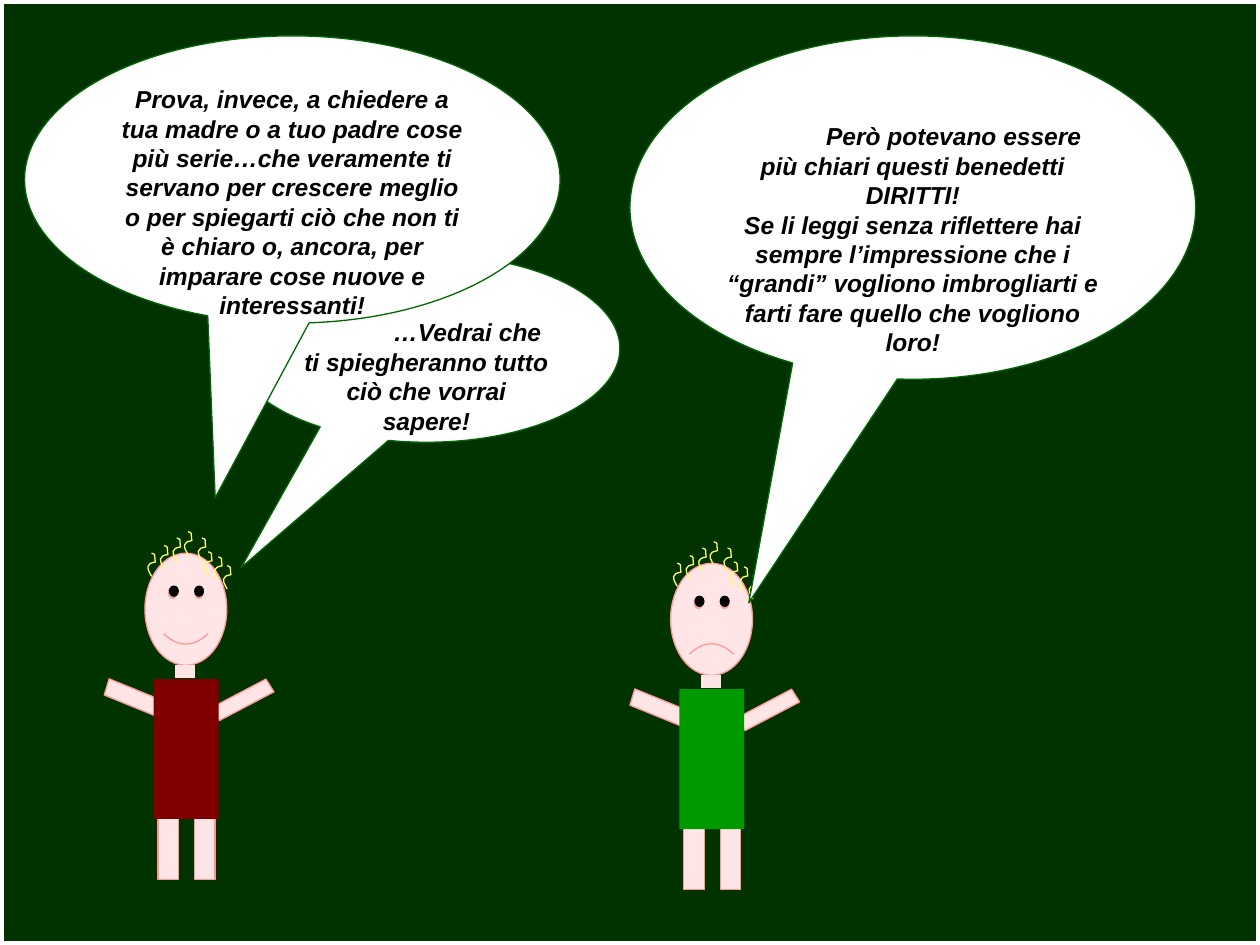
"""Build a slide of two children talking in speech bubbles."""
from dataclasses import dataclass, replace

from lxml.etree import SubElement as add_node
from pptx import Presentation
from pptx.dml.color import RGBColor
from pptx.enum.shapes import MSO_SHAPE as Kind
from pptx.enum.text import MSO_ANCHOR as Anchor, PP_ALIGN as Align
from pptx.oxml.ns import qn
from pptx.shapes.autoshape import Shape
from pptx.util import Inches, Pt

WIDE, HIGH = Inches(10), Inches(7.5)
COLS, ROWS = 100, 75
WHITE = RGBColor(0xFF, 0xFF, 0xFF)
BLACK = RGBColor(0x00, 0x00, 0x00)
DARK = RGBColor(0x00, 0x33, 0x00)
EDGE = RGBColor(0x00, 0x66, 0x00)
SKIN = RGBColor(0xFF, 0xE5, 0xE5)
PINK = RGBColor(0xFF, 0x99, 0x99)
GOLD = RGBColor(0xFF, 0xFF, 0x66)
RED = RGBColor(0x80, 0x00, 0x00)
GREEN = RGBColor(0x00, 0x99, 0x00)

Point = tuple[float, float]


@dataclass(frozen=True)
class Box:
    """A place on the grid, in columns and rows."""
    col: float
    row: float
    wide: float
    high: float

    def shift(self, col: float, row: float) -> "Box":
        """Return the box moved by columns and rows."""
        return replace(self, col=self.col + col, row=self.row + row)


@dataclass(frozen=True)
class Part:
    """A preset shape with its place and look."""
    kind: Kind
    box: Box
    fill: RGBColor | None = SKIN
    line: RGBColor | None = PINK
    turn: float = 0
    bend: tuple[float, ...] = ()


@dataclass(frozen=True)
class Kid:
    """A child with a shirt colour and a mood."""
    col: float
    row: float
    shirt: RGBColor
    smile: float


@dataclass(frozen=True)
class Bubble:
    """A speech bubble with its tail and its words."""
    box: Box
    tail: Point
    words: tuple[str, ...]
    late: bool = True


CURLS = ((0, 0), (1, -0.6), (4, -1.2), (4.5, -0.1),
         (2.9, -1.7), (6, 1), (5.3, 0.3), (2, -1.2))
CURVE = ((0.53, 1.85), (0.4, 1.55), (0, 1.1), (0.42, 0.83),
         (0.53, 0.75), (0.69, 0.75), (0.83, 0.72),
         (0.72, 0), (0.91, 0.15), (0.53, 0))
KIDS = (Kid(53.22, 44.7, GREEN, -0.047), Kid(11.5, 43.9, RED, 0.047))
BACK = Bubble(Box(18.5, 20.2, 30.7, 14.9), (-0.479, 1.167),
              ("…Vedrai che ti spiegheranno tutto ciò che vorrai sapere!",))
FRONT = (
    Bubble(Box(1.95, 2.85, 42.5, 22.8), (-0.144, 1.108),
           ("Prova, invece, a chiedere a tua madre o a tuo padre cose più "
            "serie…che veramente ti servano per crescere meglio o per "
            "spiegarti ciò che non ti è chiaro o, ancora, per imparare cose "
            "nuove e interessanti!",), False),
    Bubble(Box(50, 2.85, 44.9, 27.25), (-0.29, 1.151),
           ("Però potevano essere più chiari questi benedetti DIRITTI!",
            "Se li leggi senza riflettere hai sempre l’impressione che i "
            "“grandi” vogliono imbrogliarti e farti fare quello che vogliono "
            "loro!")),
)


def across(cols: float) -> int:
    """Turn columns into a length."""
    return round(WIDE * cols / COLS)


def down(rows: float) -> int:
    """Turn rows into a length."""
    return round(HIGH * rows / ROWS)


def paint(shape: Shape, fill: RGBColor | None, line: RGBColor | None,
          weight: float = 0.75) -> None:
    """Set the fill and outline and drop the shadow."""
    shape.shadow.inherit = False
    if fill is None:
        shape.fill.background()
    else:
        shape.fill.solid()
        shape.fill.fore_color.rgb = fill
    if line is None:
        shape.line.fill.background()
    else:
        shape.line.color.rgb = line
        shape.line.width = Pt(weight)


def draw(shapes, part: Part, weight: float = 0.75) -> Shape:
    """Add one preset shape."""
    box = part.box
    shape = shapes.add_shape(part.kind, across(box.col), down(box.row),
                             across(box.wide), down(box.high))
    paint(shape, part.fill, part.line, weight)
    shape.rotation = part.turn
    for i, value in enumerate(part.bend):
        shape.adjustments[i] = value
    return shape


def draw_curl(shapes, col: float, row: float) -> None:
    """Add one curl of hair, turning each three lines into a curve."""
    spots = [(across(col + x), down(row + y)) for x, y in CURVE]
    pen = shapes.build_freeform(*spots[0])
    pen.add_line_segments(spots[1:], close=False)
    curl = pen.convert_to_shape()
    paint(curl, None, GOLD)
    lines = list(curl._element.iter(qn("a:lnTo")))
    route = lines[0].getparent()
    for i in range(0, len(lines), 3):
        bow = add_node(route, qn("a:cubicBezTo"))
        for line in lines[i:i + 3]:
            bow.append(line[0])
            route.remove(line)


def draw_kid(shapes, kid: Kid) -> None:
    """Add a child as one group."""
    group = shapes.add_group_shape().shapes
    slant = Kind.PARALLELOGRAM
    parts = (
        Part(slant, Box(6.95, 9.2, 1.6, 4.9), turn=57.6, bend=(0.25,)),
        Part(slant, Box(-1.65, 9.1, 1.8, 4.9), turn=106.9, bend=(0.25,)),
        *(Part(Kind.RECTANGLE, Box(x, 20.1, 1.63, 5.8)) for x in (1.05, 3.95)),
        Part(Kind.SMILEY_FACE, Box(0, 0, 6.5, 8.9), bend=(kid.smile,)),
        *(Part(Kind.OVAL, Box(x, 2.57, 0.8, 0.9), BLACK, None)
          for x in (3.9, 1.9)),
        Part(Kind.RECTANGLE, Box(2.45, 8.9, 1.5, 1), line=SKIN),
        Part(Kind.RECTANGLE, Box(0.7, 10, 5.15, 11.1), kid.shirt, None),
    )
    for part in parts:
        draw(group, replace(part, box=part.box.shift(kid.col, kid.row)))
    for x, y in CURLS:
        draw_curl(group, kid.col + x, kid.row + y)


def draw_bubble(shapes, bubble: Bubble) -> None:
    """Add a speech bubble, starting a line lower when late."""
    shape = draw(shapes, Part(Kind.OVAL_CALLOUT, bubble.box, WHITE, EDGE,
                              bend=bubble.tail))
    frame = shape.text_frame
    frame.word_wrap = True
    frame.vertical_anchor = Anchor.TOP
    frame.margin_top = Inches(0.28 if bubble.late else 0.05)
    for i, words in enumerate(bubble.words):
        para = frame.add_paragraph() if i else frame.paragraphs[0]
        para.text = words
        para.alignment = Align.CENTER
        font = para.font
        font.name, font.size = "Arial", Pt(14)
        font.bold = font.italic = True
        font.color.rgb = BLACK
        if bubble.late and i == 0:
            para._p.get_or_add_pPr().set("indent", str(Inches(0.65)))


def main() -> None:
    """Draw the slide and save it."""
    deck = Presentation()
    deck.slide_width, deck.slide_height = WIDE, HIGH
    slide = deck.slides.add_slide(deck.slide_layouts[6])
    slide.background.fill.solid()
    slide.background.fill.fore_color.rgb = DARK
    shapes = slide.shapes
    draw_bubble(shapes, BACK)
    draw(shapes, Part(Kind.RECTANGLE, Box(0, 0, COLS, ROWS), None, WHITE), 4.5)
    for kid in KIDS:
        draw_kid(shapes, kid)
    for bubble in FRONT:
        draw_bubble(shapes, bubble)
    deck.save("out.pptx")


if __name__ == "__main__":
    main()
